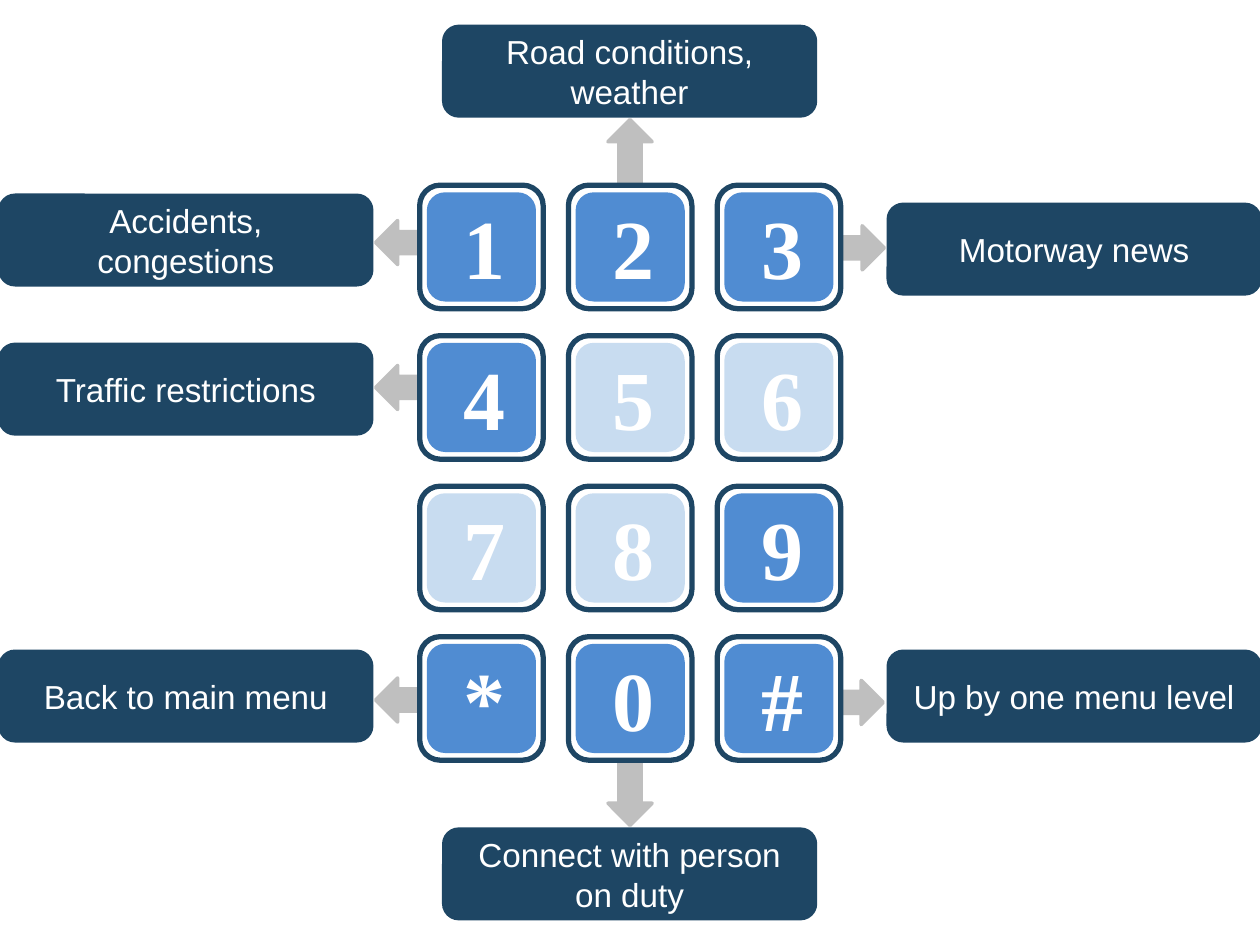
from pptx import Presentation
from pptx.dml.color import RGBColor
from pptx.enum.shapes import MSO_SHAPE
from pptx.enum.text import MSO_ANCHOR, MSO_AUTO_SIZE, PP_ALIGN
from pptx.util import Pt

NAVY = RGBColor(0x1E, 0x46, 0x64)
BLUE = RGBColor(0x50, 0x8C, 0xD2)
PALE = RGBColor(0xC8, 0xDC, 0xF0)
GREY = RGBColor(0xBF, 0xBF, 0xBF)
WHITE = RGBColor(0xFF, 0xFF, 0xFF)

ROWS = ("123", "456", "789", "*0#")
UNUSED = "5678"
KEYPAD = (239.8, 105.8, 240.6, 328.6)
KEY = 70.6
LABEL = (212.4, 51.1)
LONG, SHORT = 36.7, 25.2
LEFT, MID, RIGHT = 0, 253.6, 507.6

LABELS = (
    ("Road conditions, weather", MID, 15.1),
    ("Connect with person on duty", MID, 473.8),
    ("Accidents, congestions", LEFT, 111.6),
    ("Motorway news", RIGHT, 116.8),
    ("Up by one menu level", RIGHT, 372.2),
    ("Traffic restrictions", LEFT, 196.8),
    ("Back to main menu", LEFT, 372.2),
)
ARROWS = (
    (MSO_SHAPE.RIGHT_ARROW, 468, 388.8, LONG, SHORT),
    (MSO_SHAPE.RIGHT_ARROW, 468.6, 129, LONG, SHORT),
    (MSO_SHAPE.LEFT_ARROW, 214.6, 387.4, LONG, SHORT),
    (MSO_SHAPE.LEFT_ARROW, 214.6, 208.8, LONG, SHORT),
    (MSO_SHAPE.LEFT_ARROW, 214.6, 126, LONG, SHORT),
    (MSO_SHAPE.DOWN_ARROW, 347.4, 434.9, SHORT, LONG),
    (MSO_SHAPE.UP_ARROW, 347.4, 68.4, SHORT, LONG),
)


def add_form(shapes, kind, box, fill, line=None, width=2):
    """Add a flat preset shape in the given box."""
    form = shapes.add_shape(kind, *map(Pt, box))
    form.shadow.inherit = False
    form.fill.solid()
    form.fill.fore_color.rgb = fill
    if line is None:
        form.line.fill.background()
    else:
        form.line.color.rgb = line
        form.line.width = Pt(width)
    return form


def set_text(frame, text, font, size, bold=False):
    """Write one centred white paragraph."""
    frame.text = text
    para = frame.paragraphs[0]
    para.alignment = PP_ALIGN.CENTER
    style = para.runs[0].font
    style.name, style.size, style.bold = font, Pt(size), bold
    style.color.rgb = WHITE


def add_key(slide, box, sign):
    """Add one grouped key: rim, cap and sign."""
    left, top, width, height = box
    shapes = slide.shapes.add_group_shape().shapes
    add_form(shapes, MSO_SHAPE.ROUNDED_RECTANGLE, box, WHITE, NAVY, 3)
    inset = 4.1
    cap = (left + inset, top + inset, width - 2 * inset, height - 2 * inset)
    tint = PALE if sign in UNUSED else BLUE
    add_form(shapes, MSO_SHAPE.ROUNDED_RECTANGLE, cap, tint)
    text = shapes.add_textbox(Pt(left + 18), Pt(top + 2.5), Pt(33.8), Pt(65.5))
    frame = text.text_frame
    frame.word_wrap = False
    frame.auto_size = MSO_AUTO_SIZE.SHAPE_TO_FIT_TEXT
    set_text(frame, sign, "Times New Roman", 48, True)


def add_keypad(slide, box):
    """Spread the keys evenly over the box."""
    left, top, width, height = box
    across = (width - KEY) / (len(ROWS[0]) - 1)
    down = (height - KEY) / (len(ROWS) - 1)
    for row, signs in enumerate(ROWS):
        for col, sign in enumerate(signs):
            spot = (left + col * across, top + row * down, KEY, KEY)
            add_key(slide, spot, sign)


def add_label(slide, box, text):
    """Add a navy label that names a key's function."""
    form = add_form(slide.shapes, MSO_SHAPE.ROUNDED_RECTANGLE, box, NAVY, NAVY)
    frame = form.text_frame
    frame.word_wrap = True
    frame.vertical_anchor = MSO_ANCHOR.MIDDLE
    frame.margin_left = frame.margin_right = Pt(8)
    set_text(frame, text, "Arial", 19)


def main():
    """Build the phone menu slide."""
    deck = Presentation()
    deck.slide_width, deck.slide_height = Pt(720), Pt(540)
    slide = deck.slides.add_slide(deck.slide_layouts[6])
    for kind, *box in ARROWS:
        add_form(slide.shapes, kind, box, GREY, GREY)
    add_keypad(slide, KEYPAD)
    for text, left, top in LABELS:
        add_label(slide, (left, top, *LABEL), text)
    deck.save("out.pptx")


if __name__ == "__main__":
    main()
